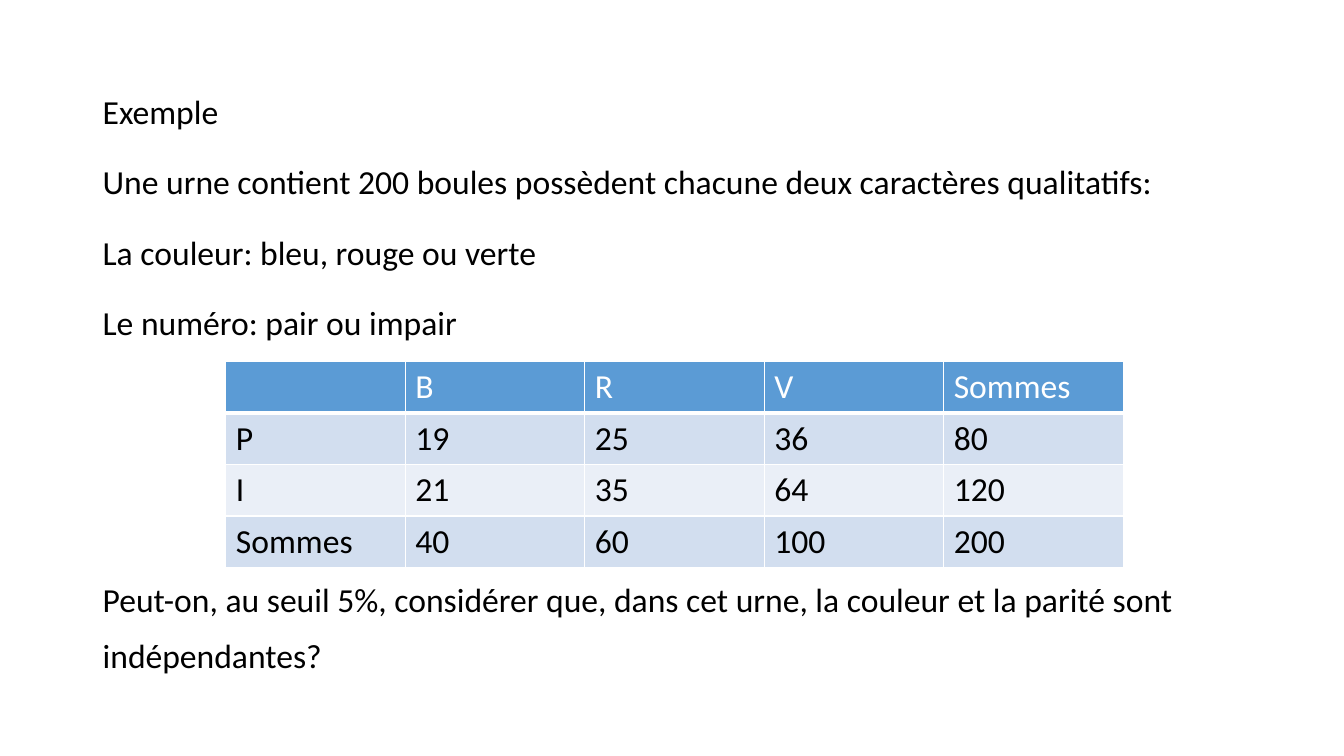
from lxml import etree
from pptx import Presentation
from pptx.dml.color import RGBColor
from pptx.oxml.ns import qn
from pptx.util import Inches, Pt

INTRO = [
    "Exemple",
    "Une urne contient 200 boules possèdent chacune deux caractères qualitatifs:",
    "La couleur: bleu, rouge ou verte",
    "Le numéro: pair ou impair",
]
QUESTION = [
    "Peut-on, au seuil 5%, considérer que, dans cet urne, la couleur et la parité sont indépendantes?",
]
COUNTS = [
    ["", "B", "R", "V", "Sommes"],
    ["P", "19", "25", "36", "80"],
    ["I", "21", "35", "64", "120"],
    ["Sommes", "40", "60", "100", "200"],
]
BLACK, WHITE = "000000", "FFFFFF"
HEADER_FILL = "5B9BD5"
BAND_FILLS = ["EAEFF7", "D2DEEF"]
FONT, SIZE = "Calibri", 24
TEXT_LEFT, TEXT_WIDTH = 0.92, 11.5
COLUMN_WIDTH, ROW_HEIGHT = 1.78, 0.51


def rgb(value):
    return RGBColor.from_string(value)


def add_run(paragraph, text, color):
    run = paragraph.add_run()
    run.text = text
    run.font.name = FONT
    run.font.size = Pt(SIZE)
    run.font.color.rgb = rgb(color)


def add_text(slide, lines, top, height):
    box = slide.shapes.add_textbox(
        Inches(TEXT_LEFT), Inches(top), Inches(TEXT_WIDTH), Inches(height))
    frame = box.text_frame
    frame.word_wrap = True
    for index, line in enumerate(lines):
        paragraph = frame.add_paragraph() if index else frame.paragraphs[0]
        paragraph.line_spacing = 1.4
        paragraph.space_before = Pt(10 if index else 0)
        add_run(paragraph, line, BLACK)


def add_borders(cell, bottom_width):
    properties = cell._tc.get_or_add_tcPr()
    for side, width in (("L", 1), ("R", 1), ("T", 1), ("B", bottom_width)):
        border = etree.SubElement(properties, qn(f"a:ln{side}"), w=str(Pt(width)))
        fill = etree.SubElement(border, qn("a:solidFill"))
        etree.SubElement(fill, qn("a:srgbClr"), val=WHITE)


def add_counts(slide, left, top):
    row_count, column_count = len(COUNTS), len(COUNTS[0])
    table = slide.shapes.add_table(
        row_count, column_count, Inches(left), Inches(top),
        Inches(column_count * COLUMN_WIDTH), Inches(row_count * ROW_HEIGHT)).table
    for column in table.columns:
        column.width = Inches(COLUMN_WIDTH)
    for r, values in enumerate(COUNTS):
        table.rows[r].height = Inches(ROW_HEIGHT)
        for c, value in enumerate(values):
            cell = table.cell(r, c)
            add_borders(cell, 1 if r else 3)
            cell.fill.solid()
            cell.fill.fore_color.rgb = rgb(BAND_FILLS[r % 2] if r else HEADER_FILL)
            paragraph = cell.text_frame.paragraphs[0]
            if value:
                add_run(paragraph, value, BLACK if r else WHITE)
                paragraph.runs[0].font.bold = False


def main():
    deck = Presentation()
    deck.slide_width, deck.slide_height = Inches(13.33), Inches(7.5)
    slide = deck.slides.add_slide(deck.slide_layouts[6])
    add_text(slide, INTRO, 0.69, 2.8)
    add_counts(slide, 2.24, 3.59)
    add_text(slide, QUESTION, 5.53, 1.23)
    deck.save("out.pptx")


if __name__ == "__main__":
    main()
